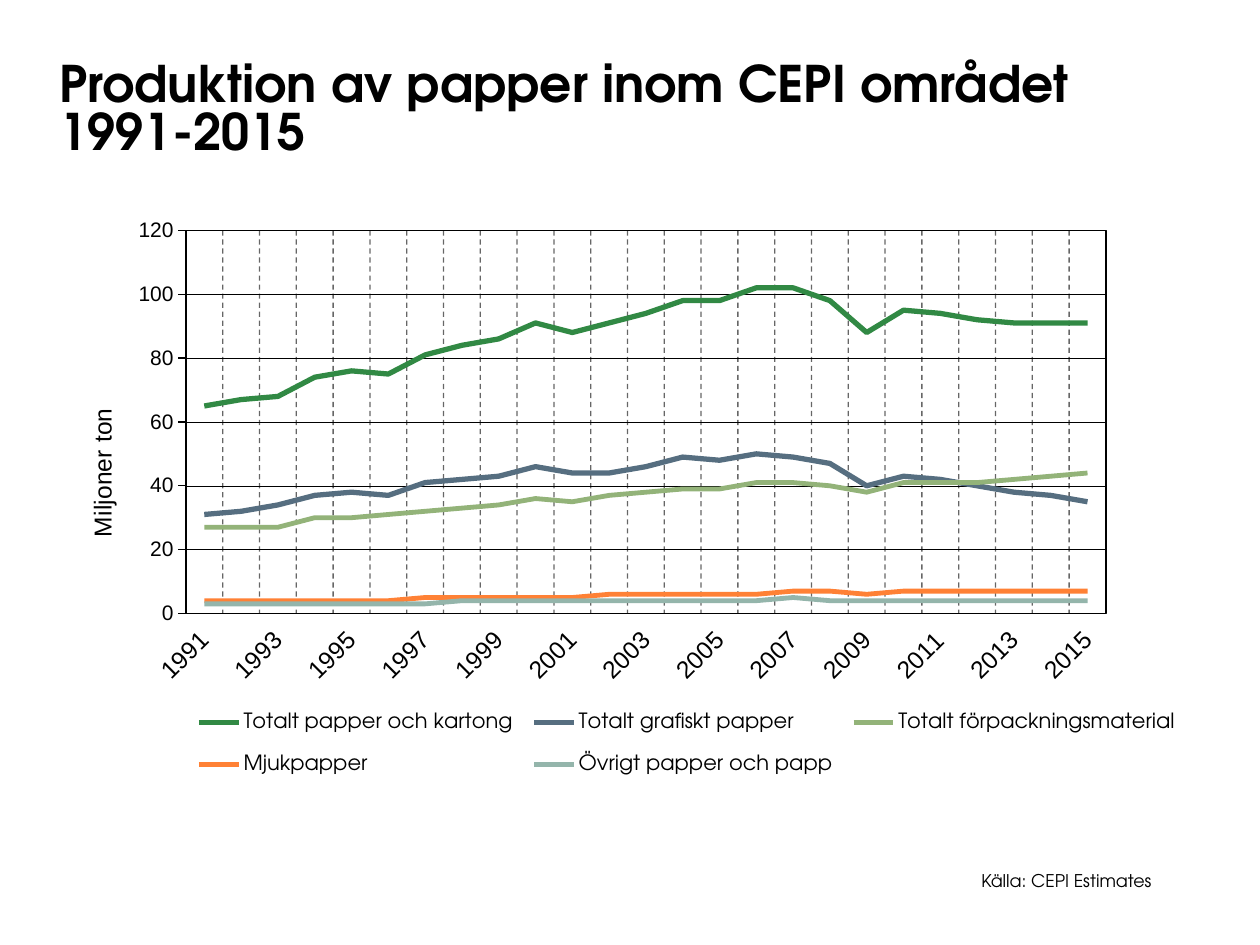
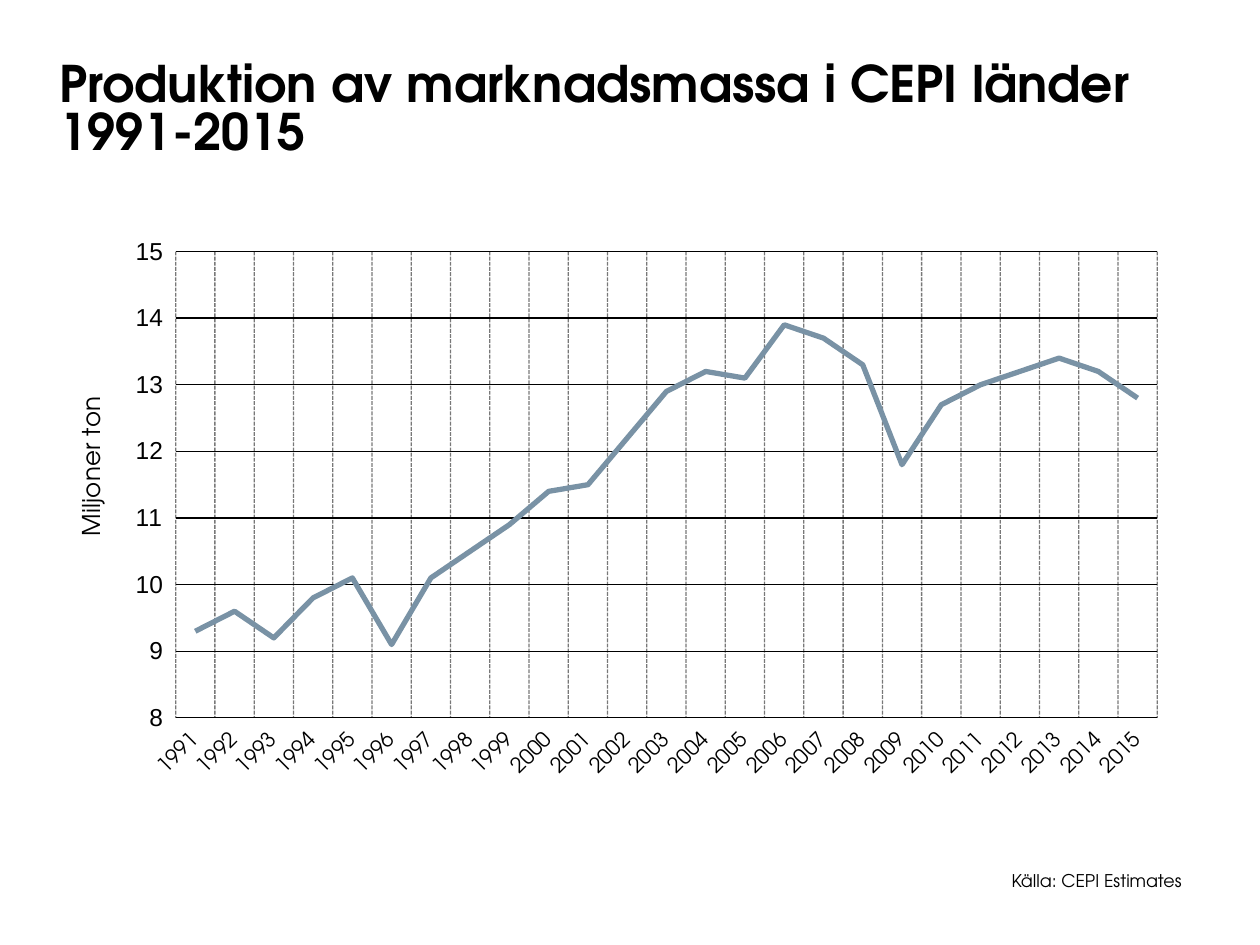
from lxml import etree
from pptx import Presentation
from pptx import util as u
from pptx.chart.data import CategoryChartData
from pptx.dml.color import RGBColor
from pptx.enum import chart as chart_enum, dml, text
from pptx.oxml import ns

SLIDE_WIDTH, SLIDE_HEIGHT = u.Inches(10), u.Inches(7.5)
BLACK = "000000"
BRAND_FONT, CHART_FONT = "TeX Gyre Adventor", "Arial"
MARGIN, CONTENT_WIDTH = 0.047, 0.906  # shares of the slide width
YEARS = [str(year) for year in range(1991, 2016)]

PAPER_SERIES = [
    ("Totalt papper och kartong", "318944", 3,
     [65, 67, 68, 74, 76, 75, 81, 84, 86, 91, 88, 91, 94, 98, 98, 102, 102, 98, 88, 95, 94, 92, 91, 91, 91]),
    ("Totalt grafiskt papper", "566E80", 3,
     [31, 32, 34, 37, 38, 37, 41, 42, 43, 46, 44, 44, 46, 49, 48, 50, 49, 47, 40, 43, 42, 40, 38, 37, 35]),
    ("Totalt förpackningsmaterial", "93B379", 2.75,
     [27, 27, 27, 30, 30, 31, 32, 33, 34, 36, 35, 37, 38, 39, 39, 41, 41, 40, 38, 41, 41, 41, 42, 43, 44]),
    ("Mjukpapper", "FF8135", 2.75,
     [4, 4, 4, 4, 4, 4, 5, 5, 5, 5, 5, 6, 6, 6, 6, 6, 7, 7, 6, 7, 7, 7, 7, 7, 7]),
    ("Övrigt papper och papp", "94B5AB", 2.75,
     [3, 3, 3, 3, 3, 3, 3, 4, 4, 4, 4, 4, 4, 4, 4, 4, 5, 4, 4, 4, 4, 4, 4, 4, 4]),
]
PULP_SERIES = [
    ("Series 1", "7992A5", 3,
     [9.3, 9.6, 9.2, 9.8, 10.1, 9.1, 10.1, 10.5, 10.9, 11.4, 11.5, 12.2, 12.9, 13.2, 13.1, 13.9, 13.7,
      13.3, 11.8, 12.7, 13, 13.2, 13.4, 13.2, 12.8]),
]


def color(hex_string):
    return RGBColor.from_string(hex_string)


def share_box(left, top, width, height):
    """Turn shares of the slide into lengths."""
    return (round(left * SLIDE_WIDTH), round(top * SLIDE_HEIGHT),
            round(width * SLIDE_WIDTH), round(height * SLIDE_HEIGHT))


def format_font(font, size, name, bold=False):
    font.size, font.name, font.bold = u.Pt(size), name, bold
    font.color.rgb = color(BLACK)


def write_text(frame, words, size=10, name=BRAND_FONT, bold=False, spacing=None):
    paragraph = frame.paragraphs[0]
    if spacing:
        paragraph.line_spacing = spacing
    run = paragraph.add_run()
    run.text = words
    format_font(run.font, size, name, bold)


def format_line(line, width, hex_string=BLACK):
    line.color.rgb = color(hex_string)
    line.width = u.Pt(width)


def add_child(parent, tag, index=None, **attributes):
    child = etree.Element(ns.qn(tag), {key: str(value) for key, value in attributes.items()})
    parent.insert(len(parent) if index is None else index, child)
    return child


def place_part(parent, index, inner=False, **shares):
    """Give a chart part a fixed place, in shares of the chart."""
    for old in parent.findall(ns.qn("c:layout")):
        parent.remove(old)
    manual = add_child(add_child(parent, "c:layout", index), "c:manualLayout")
    if inner:
        add_child(manual, "c:layoutTarget", val="inner")
    for key in ("x", "y"):
        add_child(manual, f"c:{key}Mode", val="edge")
    for key, value in shares.items():
        add_child(manual, f"c:{key}", val=value)


def add_title(slide, words):
    title = slide.shapes.title
    title.left, title.top, title.width, title.height = share_box(MARGIN, 0.06, CONTENT_WIDTH, 0.11)
    frame = title.text_frame
    frame.word_wrap = True
    frame.auto_size = text.MSO_AUTO_SIZE.NONE
    frame.vertical_anchor = text.MSO_ANCHOR.BOTTOM
    frame.margin_left = frame.margin_top = frame.margin_right = frame.margin_bottom = 0
    write_text(frame, words, size=28.8, bold=True, spacing=0.8)
    frame.paragraphs[0].alignment = text.PP_ALIGN.LEFT


def add_source(slide, left):
    box = slide.shapes.add_textbox(*share_box(left, 0.907, 0.194, 0.049))
    box.text_frame.word_wrap = True
    box.text_frame.vertical_anchor = text.MSO_ANCHOR.MIDDLE
    write_text(box.text_frame, "Källa: CEPI Estimates")


def format_category_axis(axis, size, name, dash, alpha, label_step):
    axis.major_tick_mark = chart_enum.XL_TICK_MARK.OUTSIDE
    axis.format.line.fill.background()
    format_font(axis.tick_labels.font, size, name)
    axis._element.txPr.bodyPr.set("rot", "-2700000")
    axis.has_major_gridlines = True
    grid = axis.major_gridlines.format.line
    format_line(grid, 0.75)
    grid.dash_style = dash
    for fill in axis.major_gridlines._xAx.majorGridlines.iter(ns.qn("a:srgbClr")):
        add_child(fill, "a:alpha", val=alpha * 1000)
    last = axis._element.find(ns.qn("c:noMultiLvlLbl"))
    add_child(axis._element, "c:tickLblSkip", axis._element.index(last), val=label_step)


def format_value_axis(axis, low, high, step, number_format, size, title_font, title_left, grid_width, line_width):
    axis.minimum_scale, axis.maximum_scale, axis.major_unit = low, high, step
    axis.major_tick_mark = chart_enum.XL_TICK_MARK.OUTSIDE
    axis.tick_labels.number_format = number_format
    axis.tick_labels.number_format_is_linked = False
    format_font(axis.tick_labels.font, size, CHART_FONT)
    axis.has_major_gridlines = True
    format_line(axis.major_gridlines.format.line, grid_width)
    if line_width:
        format_line(axis.format.line, line_width)
    else:
        axis.format.line.fill.background()
    # Upright axis title
    frame = axis.axis_title.text_frame
    write_text(frame, "Miljoner ton", size=14, name=title_font)
    frame._txBody.bodyPr.set("rot", "-5400000")
    frame._txBody.bodyPr.set("vert", "horz")
    place_part(axis.axis_title._element, 1, x=title_left, y=0.32)


def add_line_chart(slide, top, series_list, plot, category_axis, value_axis):
    data = CategoryChartData()
    data.categories = YEARS
    for name, _, _, values in series_list:
        data.add_series(name, values)
    chart = slide.shapes.add_chart(chart_enum.XL_CHART_TYPE.LINE,
                                   *share_box(MARGIN, top, CONTENT_WIDTH, 0.62), data).chart
    chart.has_title = chart.has_legend = False
    format_font(chart.font, 12, BRAND_FONT)
    chart.plots[0].vary_by_categories = False
    for series, (_, hex_string, width, _) in zip(chart.plots[0].series, series_list):
        series.smooth = False
        format_line(series.format.line, width, hex_string)
    format_category_axis(chart.category_axis, **category_axis)
    format_value_axis(chart.value_axis, **value_axis)
    place_part(chart._chartSpace.chart.plotArea, 0, inner=True, **plot)
    return chart


def add_legend(chart):
    chart.has_legend = True
    legend = chart.legend
    legend.position = chart_enum.XL_LEGEND_POSITION.BOTTOM
    legend.include_in_layout = False
    format_font(legend.font, 12, BRAND_FONT)
    place_part(legend._element, 1, x=0.11, y=0.81, w=0.88, h=0.18)


def add_plot_border(chart):
    properties = add_child(chart._chartSpace.chart.plotArea, "c:spPr")
    add_child(properties, "a:noFill")
    fill = add_child(add_child(properties, "a:ln", w=u.Pt(0.75)), "a:solidFill")
    add_child(fill, "a:srgbClr", val=BLACK)


def build_paper_slide(slide):
    add_title(slide, "Produktion av papper inom CEPI området 1991-2015")
    chart = add_line_chart(
        slide, 0.229, PAPER_SERIES, dict(x=0.111, y=0.024, w=0.806, h=0.654),
        dict(size=14, name=CHART_FONT, dash=dml.MSO_LINE.DASH, alpha=60, label_step=2),
        dict(low=0, high=120, step=20, number_format="#,##0", size=12, title_font=CHART_FONT,
             title_left=0.02, grid_width=0.25, line_width=0.75))
    add_legend(chart)
    add_plot_border(chart)
    add_source(slide, 0.769)


def build_pulp_slide(slide):
    add_title(slide, "Produktion av marknadsmassa i CEPI länder 1991-2015")
    add_source(slide, 0.793)
    add_line_chart(
        slide, 0.216, PULP_SERIES, dict(x=0.102, y=0.081, w=0.86, h=0.796),
        dict(size=12, name=BRAND_FONT, dash=dml.MSO_LINE.SQUARE_DOT, alpha=53, label_step=1),
        dict(low=8, high=15, step=1, number_format="0", size=14, title_font=BRAND_FONT,
             title_left=0.014, grid_width=0.75, line_width=None))


def main():
    presentation = Presentation()
    presentation.slide_width, presentation.slide_height = SLIDE_WIDTH, SLIDE_HEIGHT
    title_only = presentation.slide_layouts[5]
    for build in (build_paper_slide, build_pulp_slide):
        build(presentation.slides.add_slide(title_only))
    presentation.save("out.pptx")


if __name__ == "__main__":
    main()
